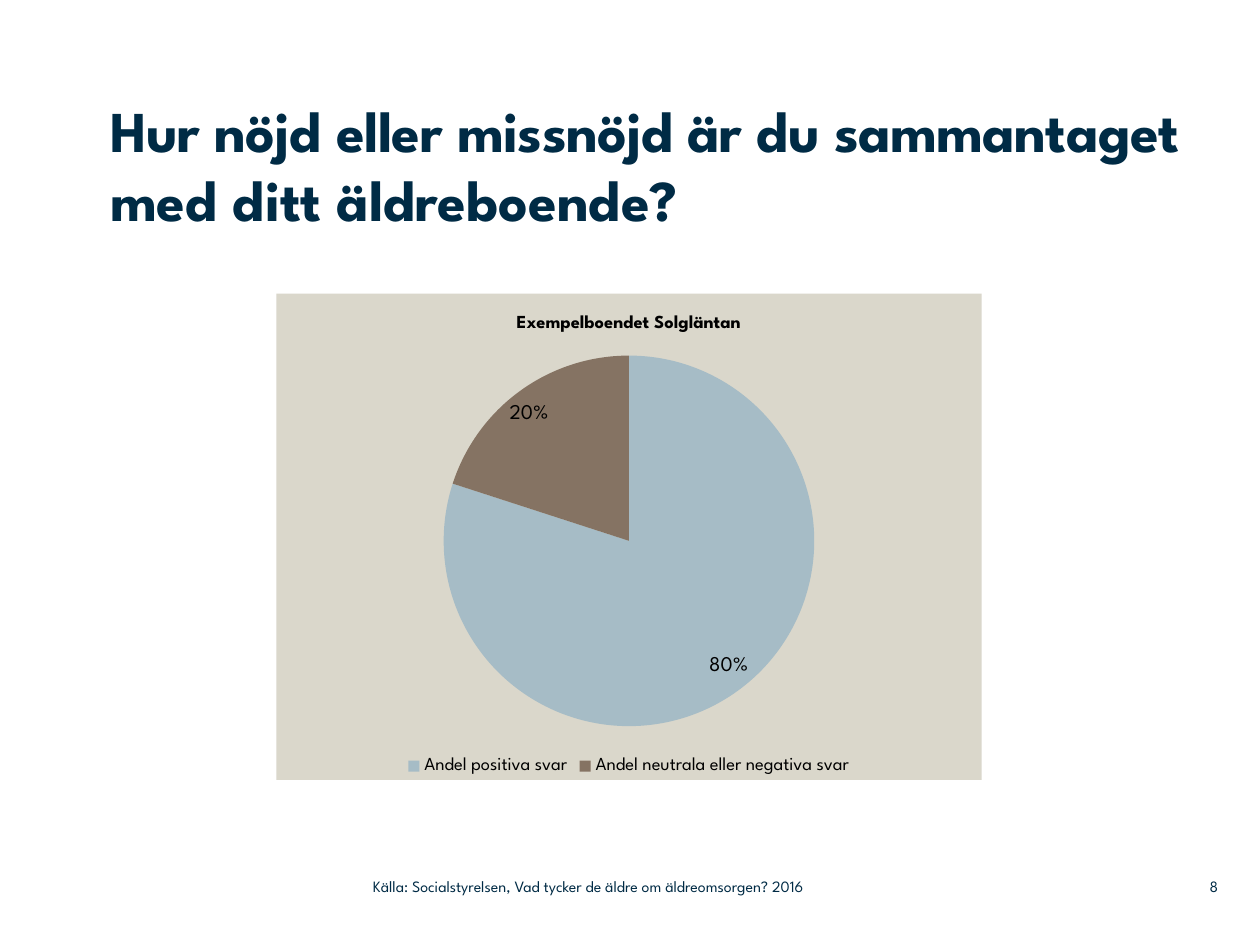
from pptx import Presentation
from pptx.chart.data import CategoryChartData
from pptx.dml.color import RGBColor
from pptx.enum.chart import XL_CHART_TYPE, XL_LABEL_POSITION, XL_LEGEND_POSITION
from pptx.enum.text import MSO_ANCHOR, PP_ALIGN
from pptx.oxml import parse_xml
from pptx.oxml.ns import nsdecls
from pptx.util import Cm, Pt

COLORS = {"navy": "002B45", "black": "000000", "sand": "DAD7CB",
          "positive": "A6BCC6", "negative": "857363"}
FONT = "League Spartan"


def style_font(font, size, color, bold=False):
    font.name = FONT
    font.size = Pt(size)
    font.bold = bold
    font.color.rgb = RGBColor.from_string(COLORS[color])


presentation = Presentation()
presentation.slide_width = Cm(25.4)
presentation.slide_height = Cm(19.05)
slide = presentation.slides.add_slide(presentation.slide_layouts[6])

texts = [
    (("Hur nöjd eller missnöjd är du sammantaget ", "med ditt äldreboende?"),
     (2.22, 1.91, 22.43, 3.6), 33, True, MSO_ANCHOR.TOP, PP_ALIGN.LEFT),
    (("Källa: Socialstyrelsen, Vad tycker de äldre om äldreomsorgen? 2016",),
     (7.52, 17.5, 11.25, 0.74), 9, False, MSO_ANCHOR.MIDDLE, PP_ALIGN.LEFT),
    (("8",), (23.37, 17.5, 1.19, 0.74), 9, False, MSO_ANCHOR.MIDDLE, PP_ALIGN.RIGHT),
]
for parts, box, size, bold, anchor, alignment in texts:
    shape = slide.shapes.add_textbox(*map(Cm, box))
    text_frame = shape.text_frame
    text_frame.word_wrap = True
    text_frame.margin_left = text_frame.margin_right = 0
    text_frame.margin_top = text_frame.margin_bottom = 0
    text_frame.vertical_anchor = anchor
    paragraph = text_frame.paragraphs[0]
    paragraph.alignment = alignment
    for part in parts:
        run = paragraph.add_run()
        run.text = part
        style_font(run.font, size, "navy", bold)
    if bold:
        paragraph.runs[0].font._element.set("spc", "-30")

chart_data = CategoryChartData()
chart_data.categories = ["Andel positiva svar", "Andel neutrala eller negativa svar"]
chart_data.add_series("Series 1", (80, 20))
chart = slide.shapes.add_chart(
    XL_CHART_TYPE.PIE, Cm(5.57), Cm(5.92), Cm(14.22), Cm(9.8), chart_data).chart
style_font(chart.font, 18, "black")
chart_space = chart._chartSpace
chart_space.chart.addnext(parse_xml(
    f'<c:spPr {nsdecls("c", "a")}><a:solidFill><a:srgbClr val="{COLORS["sand"]}"/>'
    '</a:solidFill><a:ln><a:noFill/></a:ln></c:spPr>'))

chart.has_title = True
chart.chart_title.include_in_layout = False
title_frame = chart.chart_title.text_frame
title_frame.text = "Exempelboendet Solgläntan"
style_font(title_frame.paragraphs[0].runs[0].font, 10.5, "black", True)

chart.has_legend = True
chart.legend.position = XL_LEGEND_POSITION.BOTTOM
chart.legend.include_in_layout = False
style_font(chart.legend.font, 10.5, "black")

plot = chart.plots[0]
plot.vary_by_categories = True
for index, color in enumerate(("positive", "negative")):
    point_format = plot.series[0].points[index].format
    point_format.fill.solid()
    point_format.fill.fore_color.rgb = RGBColor.from_string(COLORS[color])
    point_format.line.fill.background()

plot.has_data_labels = True
labels = plot.data_labels
labels.show_percentage = True
labels.show_value = False
labels.number_format = "0%"
labels.number_format_is_linked = False
labels.position = XL_LABEL_POSITION.BEST_FIT
style_font(labels.font, 12, "black")

presentation.save("out.pptx")
